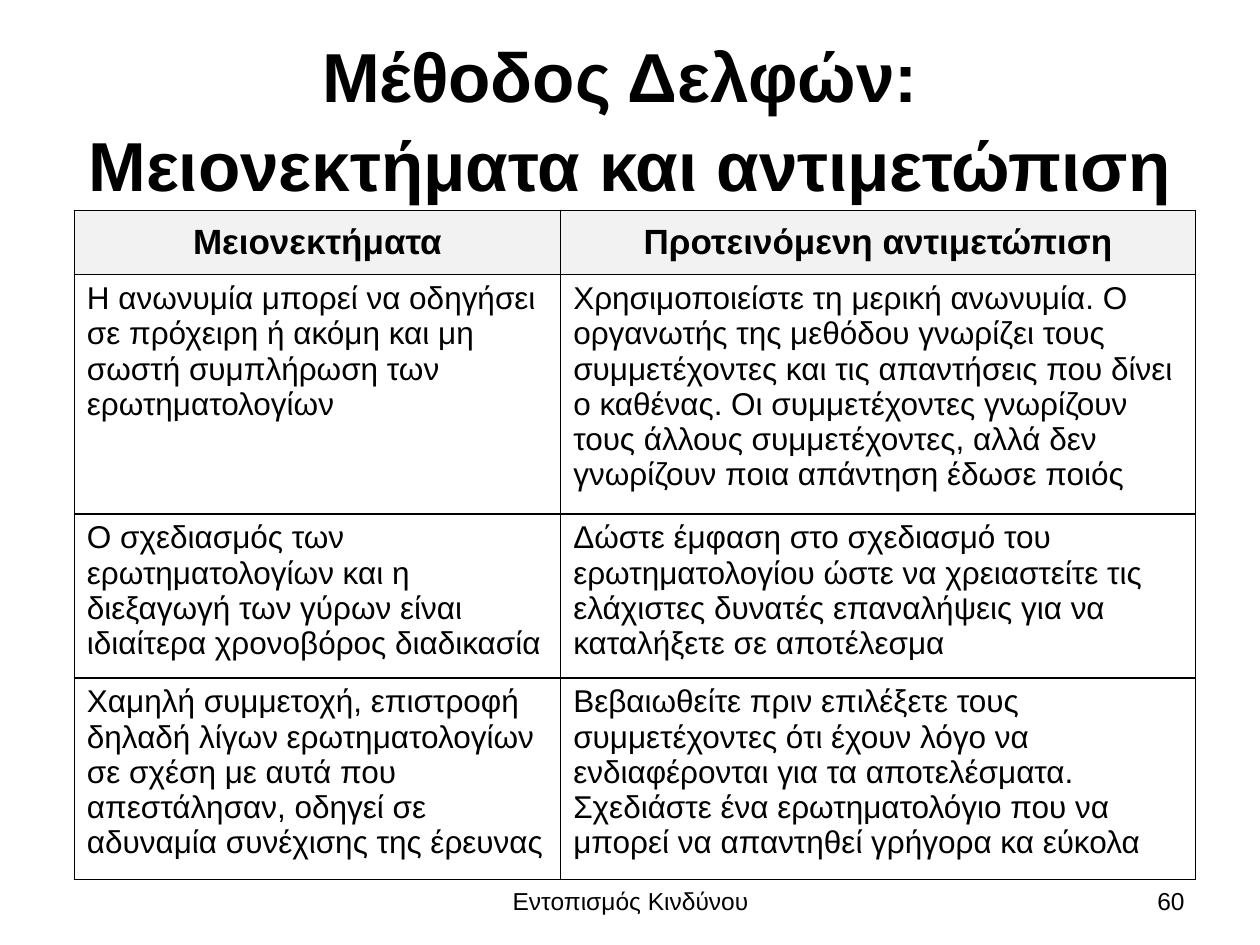
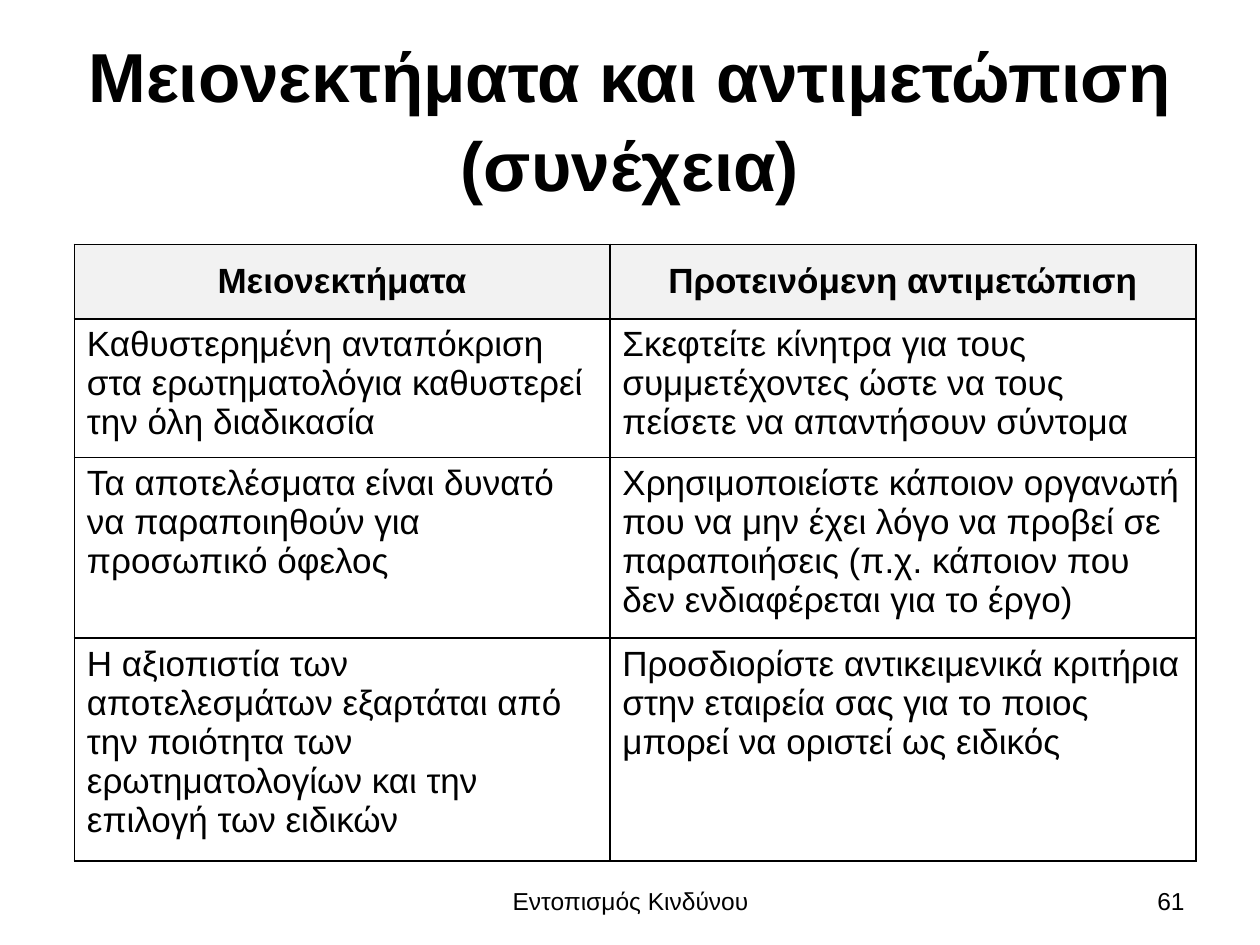
from lxml import etree
from pptx import Presentation
from pptx.dml.color import RGBColor
from pptx.enum.text import MSO_ANCHOR, PP_ALIGN
from pptx.oxml.ns import qn
from pptx.util import Inches, Pt

BLACK = RGBColor(0x00, 0x00, 0x00)
HEADER_GRAY = RGBColor(0xF2, 0xF2, 0xF2)
LEFT, CENTER, RIGHT = PP_ALIGN.LEFT, PP_ALIGN.CENTER, PP_ALIGN.RIGHT
TOP, MIDDLE = MSO_ANCHOR.TOP, MSO_ANCHOR.MIDDLE

FONT = "Arial"
TITLE_SIZE = 39.6
TITLE_SPACING = 1.07
HEADER_SIZE = 20
FOOTER_SIZE = 14
FOOTER_TOP = 6.95
FOOTER_HEIGHT = 0.4
FOOTER_TEXT = "Εντοπισμός Κινδύνου"
TABLE_LEFT = 0.59
HEADERS = ("Μειονεκτήματα", "Προτεινόμενη αντιμετώπιση")

SLIDES = [
    {
        "title": ("Μέθοδος Δελφών: ", "Μειονεκτήματα και αντιμετώπιση"),
        "number": "60",
        "top": 1.67,
        "columns": (3.86, 5.04),
        "heights": (0.51, 1.78, 1.22, 1.5),
        "size": 18,
        "rows": [
            (
                "Η ανωνυμία μπορεί να οδηγήσει σε πρόχειρη ή ακόμη και μη σωστή "
                "συμπλήρωση των ερωτηματολογίων",
                "Χρησιμοποιείστε τη μερική ανωνυμία. Ο οργανωτής της μεθόδου γνωρίζει "
                "τους συμμετέχοντες και τις απαντήσεις που δίνει ο καθένας. Οι "
                "συμμετέχοντες γνωρίζουν τους άλλους συμμετέχοντες, αλλά δεν γνωρίζουν "
                "ποια απάντηση έδωσε ποιός",
            ),
            (
                "Ο σχεδιασμός των ερωτηματολογίων και η διεξαγωγή των γύρων είναι "
                "ιδιαίτερα χρονοβόρος διαδικασία",
                "Δώστε έμφαση στο σχεδιασμό του ερωτηματολογίου ώστε να χρειαστείτε τις "
                "ελάχιστες δυνατές επαναλήψεις για να καταλήξετε σε αποτέλεσμα",
            ),
            (
                "Χαμηλή συμμετοχή, επιστροφή δηλαδή λίγων ερωτηματολογίων σε σχέση με "
                "αυτά που απεστάλησαν, οδηγεί σε αδυναμία συνέχισης της έρευνας",
                "Βεβαιωθείτε πριν επιλέξετε τους συμμετέχοντες ότι έχουν λόγο να "
                "ενδιαφέρονται για τα αποτελέσματα. Σχεδιάστε ένα ερωτηματολόγιο που να "
                "μπορεί να απαντηθεί γρήγορα κα εύκολα",
            ),
        ],
    },
    {
        "title": ("Μειονεκτήματα και αντιμετώπιση", "(συνέχεια)"),
        "number": "61",
        "top": 1.94,
        "columns": (4.25, 4.65),
        "heights": (0.59, 1.04, 1.35, 1.65),
        "size": 20,
        "rows": [
            (
                "Καθυστερημένη ανταπόκριση στα ερωτηματολόγια καθυστερεί την όλη "
                "διαδικασία",
                "Σκεφτείτε κίνητρα για τους συμμετέχοντες ώστε να τους πείσετε να "
                "απαντήσουν σύντομα",
            ),
            (
                "Τα αποτελέσματα είναι δυνατό να παραποιηθούν για προσωπικό όφελος",
                "Χρησιμοποιείστε κάποιον οργανωτή που να μην έχει λόγο να προβεί σε "
                "παραποιήσεις (π.χ. κάποιον που δεν ενδιαφέρεται για το έργο)",
            ),
            (
                "Η αξιοπιστία των αποτελεσμάτων εξαρτάται από την ποιότητα των "
                "ερωτηματολογίων και την επιλογή των ειδικών",
                "Προσδιορίστε αντικειμενικά κριτήρια στην εταιρεία σας για το ποιος "
                "μπορεί να οριστεί ως ειδικός",
            ),
        ],
    },
]


class SlideBuilder:
    def __init__(self, presentation):
        self.presentation = presentation
        self.slide = None

    def new_slide(self):
        self.slide = self.presentation.slides.add_slide(self.presentation.slide_layouts[6])

    def add_lines(self, paragraph, lines, size, align, bold=False):
        paragraph.alignment = align
        for index, line in enumerate(lines):
            if index:
                paragraph.add_line_break()
            run = paragraph.add_run()
            run.text = line
            run.font.name = FONT
            run.font.size = Pt(size)
            run.font.bold = bold
            run.font.color.rgb = BLACK

    def text(self, left, top, width, height, lines, size, align, bold=False):
        shape = self.slide.shapes.add_textbox(
            Inches(left), Inches(top), Inches(width), Inches(height)
        )
        frame = shape.text_frame
        frame.word_wrap = True
        frame.vertical_anchor = MIDDLE
        paragraph = frame.paragraphs[0]
        self.add_lines(paragraph, lines, size, align, bold)
        return paragraph

    def title(self, lines):
        paragraph = self.text(0.5, 0.3, 9, 1.25, lines, TITLE_SIZE, CENTER, True)
        paragraph.line_spacing = TITLE_SPACING

    def footer(self, number):
        self.text(3.42, FOOTER_TOP, 3.17, FOOTER_HEIGHT, [FOOTER_TEXT], FOOTER_SIZE, CENTER)
        self.text(7.17, FOOTER_TOP, 2.33, FOOTER_HEIGHT, [number], FOOTER_SIZE, RIGHT)

    def borders(self, cell):
        properties = cell._tc.get_or_add_tcPr()
        for side in ("lnL", "lnR", "lnT", "lnB"):
            line = etree.SubElement(properties, qn(f"a:{side}"), w=str(Pt(1)))
            fill = etree.SubElement(line, qn("a:solidFill"))
            etree.SubElement(fill, qn("a:srgbClr"), val=str(BLACK))

    def cell(self, cell, text, size, is_header):
        self.borders(cell)
        if is_header:
            cell.fill.solid()
            cell.fill.fore_color.rgb = HEADER_GRAY
        else:
            cell.fill.background()
        cell.vertical_anchor = MIDDLE if is_header else TOP
        align = CENTER if is_header else LEFT
        self.add_lines(cell.text_frame.paragraphs[0], [text], size, align, is_header)

    def table(self, top, columns, heights, rows, size):
        table = self.slide.shapes.add_table(
            len(heights), len(columns), Inches(TABLE_LEFT), Inches(top),
            Inches(sum(columns)), Inches(sum(heights)),
        ).table
        table.first_row = False
        table.horz_banding = False
        for column, width in zip(table.columns, columns):
            column.width = Inches(width)
        for row, height in zip(table.rows, heights):
            row.height = Inches(height)
        for row_index, texts in enumerate([HEADERS, *rows]):
            is_header = row_index == 0
            for column_index, text in enumerate(texts):
                self.cell(
                    table.cell(row_index, column_index), text,
                    HEADER_SIZE if is_header else size, is_header,
                )


def main():
    presentation = Presentation()
    presentation.slide_width = Inches(10)
    presentation.slide_height = Inches(7.5)
    builder = SlideBuilder(presentation)
    for content in SLIDES:
        builder.new_slide()
        builder.title(content["title"])
        builder.table(
            content["top"], content["columns"], content["heights"],
            content["rows"], content["size"],
        )
        builder.footer(content["number"])
    presentation.save("out.pptx")


if __name__ == "__main__":
    main()
